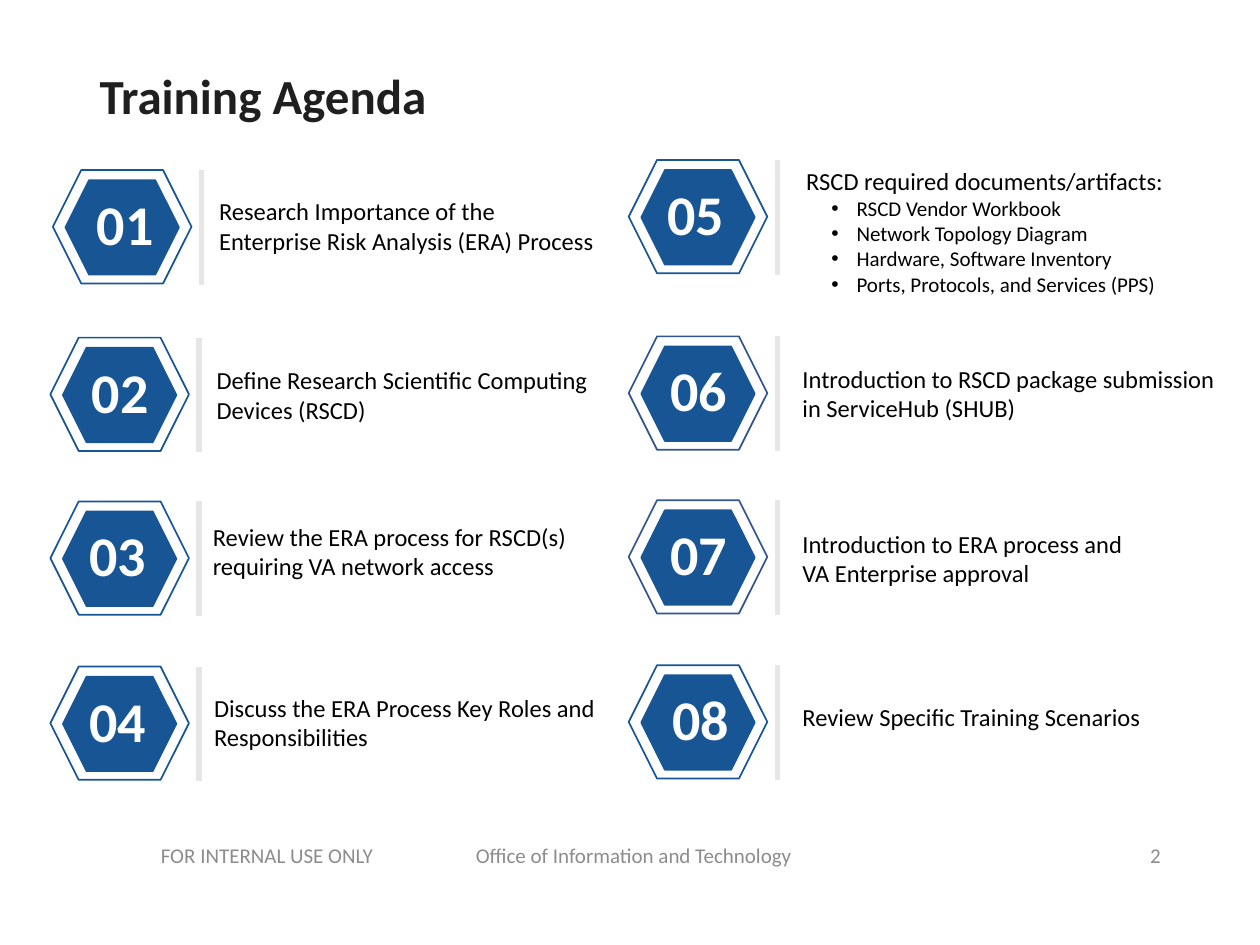
from lxml.etree import SubElement
from pptx import Presentation
from pptx.dml.color import RGBColor
from pptx.enum.shapes import MSO_CONNECTOR, MSO_SHAPE
from pptx.enum.text import MSO_ANCHOR, MSO_AUTO_SIZE, PP_ALIGN
from pptx.oxml.ns import qn
from pptx.util import Inches, Pt

TITLE = "Training Agenda"
FOOTER = "FOR INTERNAL USE ONLY\t\tOffice of Information and Technology"
PAGE = "2"
COLORS = {"title": "1F1F1F", "footer": "8C8C8C", "hexagon": "175594",
          "alt": "325491", "bar": "E7E6E6", "text": "000000", "number": "FFFFFF"}
FONT = "Calibri"

# number, outline color, hexagon (x, y), number x, text (x, y, width, height), lines
LEFT = [
    ("01", "hexagon", (0.42, 1.35), 0.61, (1.64, 1.51, 3.18, 0.57),
     ["Research Importance of the Enterprise Risk Analysis (ERA) Process"]),
    ("02", "hexagon", (0.4, 2.68), 0.57, (1.62, 2.85, 3.18, 0.57),
     ["Define Research Scientific Computing Devices (RSCD)"]),
    ("03", "hexagon", (0.4, 3.98), 0.55, (1.59, 4.09, 3.41, 0.57),
     ["Review the ERA process for RSCD(s) requiring VA network access"]),
    ("04", "hexagon", (0.4, 5.29), 0.55, (1.6, 5.45, 3.29, 0.57),
     ["Discuss the ERA Process Key Roles and Responsibilities"]),
]
RIGHT = [
    ("05", "hexagon", (4.99, 1.27), 5.2, (6.3, 1.27, 3.6, 1.14),
     ["RSCD required documents/artifacts:"]),
    ("06", "alt", (4.99, 2.67), 5.22, (6.27, 2.84, 3.48, 0.57),
     ["Introduction to RSCD package submission in ServiceHub (SHUB)"]),
    ("07", "alt", (4.99, 3.97), 5.22, (6.27, 4.15, 3.67, 0.57),
     ["Introduction to ERA process and", "VA Enterprise approval"]),
    ("08", "hexagon", (4.99, 5.28), 5.24, (6.27, 5.52, 2.9, 0.34),
     ["Review Specific Training Scenarios"]),
]
ARTIFACTS = {"05": ["RSCD Vendor Workbook", "Network Topology Diagram",
                    "Hardware, Software Inventory",
                    "Ports, Protocols, and Services (PPS)"]}


def rgb(name):
    return RGBColor.from_string(COLORS[name])


def add_run(p, text, size, color, bold=False):
    r = p.add_run()
    r.text = text
    r.font.name, r.font.size, r.font.bold = FONT, Pt(size), bold
    r.font.color.rgb = rgb(color)


def add_box(s, box, anchor=MSO_ANCHOR.TOP, align=PP_ALIGN.LEFT):
    tf = s.shapes.add_textbox(*map(Inches, box)).text_frame
    tf.word_wrap = True
    tf.vertical_anchor = anchor
    tf.paragraphs[0].alignment = align
    return tf


def add_hexagon(group, box, line, fill=None):
    sp = group.shapes.add_shape(MSO_SHAPE.HEXAGON, *map(Inches, box))
    sp.shadow.inherit = False
    sp.line.color.rgb = rgb(line)
    sp.line.width = Pt(1)
    if fill:
        sp.fill.solid()
        sp.fill.fore_color.rgb = rgb(fill)
    else:
        sp.fill.background()


def add_badge(s, x, y, outline):
    group = s.shapes.add_group_shape()
    add_hexagon(group, (x + 0.1, y + 0.08, 0.9, 0.75), "hexagon", "hexagon")
    add_hexagon(group, (x, y, 1.1, 0.9), outline)
    bar_x = x + 1.18
    bar = group.shapes.add_connector(
        MSO_CONNECTOR.STRAIGHT,
        *map(Inches, (bar_x, y, bar_x, y + 0.91)))
    bar.line.color.rgb = rgb("bar")
    bar.line.width = Pt(3)
    SubElement(bar.element.spPr, qn("a:effectLst"))


def add_bullet(tf, text):
    p = tf.add_paragraph()
    p.level = 1
    pPr = p._p.get_or_add_pPr()
    pPr.set("marL", str(Inches(0.4)))
    pPr.set("indent", str(Inches(-0.2)))
    SubElement(pPr, qn("a:buFont"), typeface="Arial")
    SubElement(pPr, qn("a:buChar"), char="•")
    add_run(p, text, 12, "text")


def add_item(s, item, align):
    number, outline, (x, y), number_x, box, lines = item
    add_badge(s, x, y, outline)
    tf = add_box(s, (number_x, y + 0.08, 0.77, 0.75), MSO_ANCHOR.MIDDLE, align)
    p = tf.paragraphs[0]
    p.line_spacing = 0.9
    add_run(p, number, 32, "number", True)
    tf = add_box(s, box)
    p = tf.paragraphs[0]
    for i, line in enumerate(lines):
        if i:
            p.add_line_break()
        add_run(p, line, 14, "text")
    for text in ARTIFACTS.get(number, []):
        add_bullet(tf, text)


def main():
    prs = Presentation()
    prs.slide_width, prs.slide_height = Inches(10), Inches(7.5)
    s = prs.slides.add_slide(prs.slide_layouts[5])

    title = s.shapes.title
    title.left, title.top, title.width, title.height = map(
        Inches, (0.69, 0.41, 8.62, 0.75))
    tf = title.text_frame
    tf.auto_size = MSO_AUTO_SIZE.NONE
    tf.vertical_anchor = MSO_ANCHOR.MIDDLE
    p = tf.paragraphs[0]
    p.alignment = PP_ALIGN.LEFT
    p.line_spacing = 0.9
    add_run(p, TITLE, 28, "title", True)

    for items, align in ((LEFT, PP_ALIGN.CENTER), (RIGHT, PP_ALIGN.LEFT)):
        for item in items:
            add_item(s, item, align)

    for text, x, width, align in ((FOOTER, 0.69, 6.18, PP_ALIGN.CENTER),
                                  (PAGE, 7.06, 2.25, PP_ALIGN.RIGHT)):
        tf = add_box(s, (x, 6.59, width, 0.4), MSO_ANCHOR.MIDDLE, align)
        add_run(tf.paragraphs[0], text, 12, "footer")

    prs.save("out.pptx")


if __name__ == "__main__":
    main()
